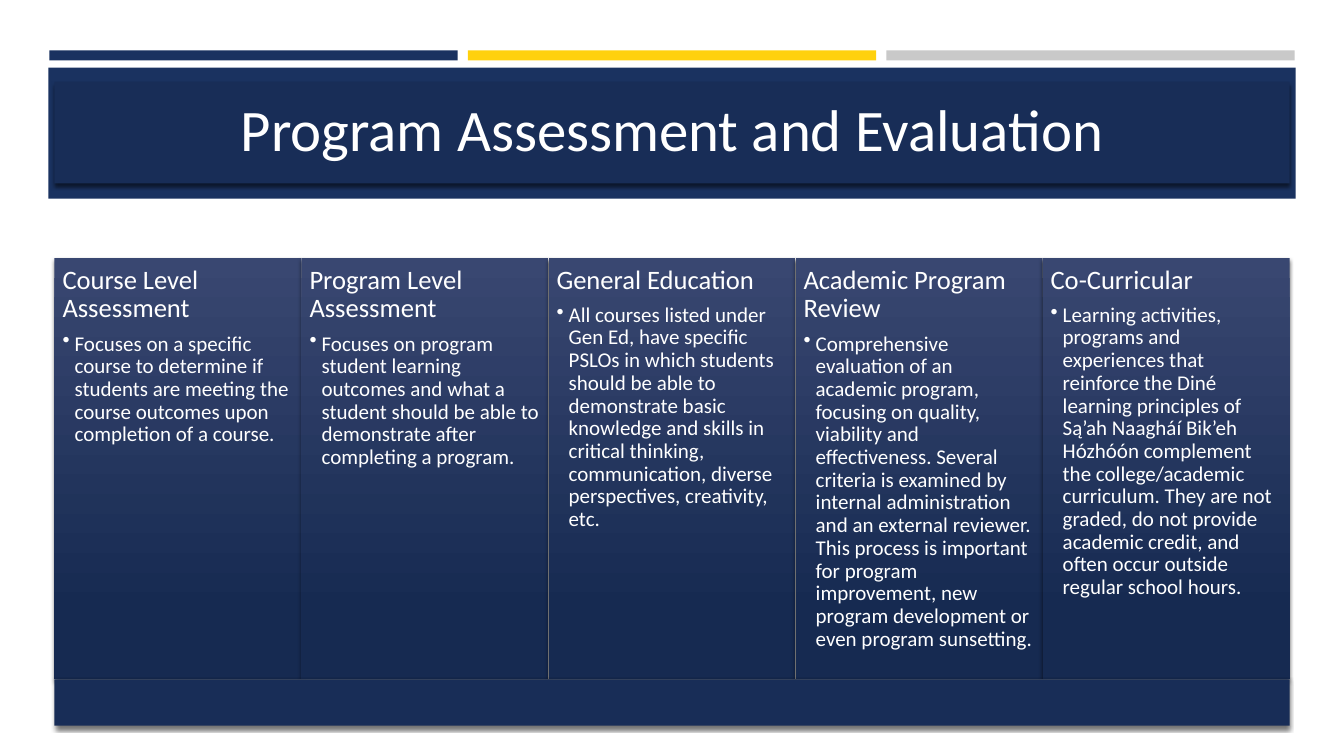
from lxml.etree import SubElement
from pptx import Presentation
from pptx.dml.color import RGBColor
from pptx.enum.shapes import MSO_SHAPE
from pptx.enum.text import MSO_ANCHOR, MSO_AUTO_SIZE, PP_ALIGN
from pptx.oxml import parse_xml
from pptx.oxml.ns import nsdecls, qn
from pptx.util import Inches, Pt

COLORS = {
    "navy": "1A3260",
    "yellow": "FFD10D",
    "gray": "C9C9C9",
    "panel": "182D57",
    "column_top": "394771",
    "column_bottom": "162A51",
    "text": "FFFFFF",
}
FONT = "Calibri"
LEFT, WIDTH = 0.54, 12.25
COLUMN_TOP, COLUMN_HEIGHT = 2.56, 4.18

COLUMNS = [
    ("Course Level Assessment",
     "Focuses on a specific course to determine if students are meeting the "
     "course outcomes upon completion of a course."),
    ("Program Level Assessment",
     "Focuses on program student learning outcomes and what a student should "
     "be able to demonstrate after completing a program."),
    ("General Education",
     "All courses listed under Gen Ed, have specific PSLOs in which students "
     "should be able to demonstrate basic knowledge and skills in critical "
     "thinking, communication, diverse perspectives, creativity, etc."),
    ("Academic Program Review",
     "Comprehensive evaluation of an academic program, focusing on quality, "
     "viability and effectiveness. Several criteria is examined by internal "
     "administration and an external reviewer. This process is important for "
     "program improvement, new program development or even program sunsetting."),
    ("Co-Curricular",
     "Learning activities, programs and experiences that reinforce the Diné "
     "learning principles of Są’ah Naagháí Bik’eh Hózhóón complement the "
     "college/academic curriculum. They are not graded, do not provide "
     "academic credit, and often occur outside regular school hours."),
]


def add_block(left, top, width, height, color):
    """Add a borderless, flat rectangle."""
    shape = slide.shapes.add_shape(
        MSO_SHAPE.RECTANGLE, Inches(left), Inches(top), Inches(width), Inches(height))
    shape.shadow.inherit = False
    shape.fill.solid()
    shape.fill.fore_color.rgb = RGBColor.from_string(COLORS[color])
    shape.line.fill.background()
    return shape


def add_soft_shadow(shape):
    shape.shadow.inherit = False
    effects = shape._element.spPr.find(qn("a:effectLst"))
    effects.append(parse_xml(
        f'<a:outerShdw {nsdecls("a")} blurRad="{Pt(3)}" dist="{Pt(2)}" dir="5400000" '
        'rotWithShape="0"><a:srgbClr val="000000"><a:alpha val="55000"/></a:srgbClr>'
        '</a:outerShdw>'))


presentation = Presentation()
presentation.slide_width = Inches(13.33)
presentation.slide_height = Inches(7.5)
slide = presentation.slides.add_slide(presentation.slide_layouts[5])

# Header stripes and band
for index, color in enumerate(["navy", "yellow", "gray"]):
    add_block(0.49 + index * 4.15, 0.5, 4.05, 0.1, color)
add_block(0.48, 0.67, 12.37, 1.3, "navy")

# Title, raised above the band
title = slide.shapes.title
slide.shapes._spTree.append(title._element)
title.left, title.top = Inches(LEFT), Inches(0.81)
title.width, title.height = Inches(WIDTH), Inches(1.01)
title.fill.solid()
title.fill.fore_color.rgb = RGBColor.from_string(COLORS["panel"])
add_soft_shadow(title)
title.text_frame.text = "Program Assessment and Evaluation"
title.text_frame.auto_size = MSO_AUTO_SIZE.NONE
title.text_frame.vertical_anchor = MSO_ANCHOR.MIDDLE
paragraph = title.text_frame.paragraphs[0]
paragraph.alignment = PP_ALIGN.CENTER
paragraph.line_spacing = 0.9
paragraph.font.size = Pt(42)
paragraph.font.name = FONT
paragraph.font.color.rgb = RGBColor.from_string(COLORS["text"])

# Five columns
column_width = WIDTH / len(COLUMNS)
for index, (heading, description) in enumerate(COLUMNS):
    column = add_block(LEFT + index * column_width, COLUMN_TOP,
                       column_width, COLUMN_HEIGHT, "panel")
    column.fill.gradient()
    column.fill.gradient_angle = 270
    stops = zip(column.fill.gradient_stops, [0, 0.84], ["column_top", "column_bottom"])
    for stop, position, color in stops:
        stop.position = position
        stop.color.rgb = RGBColor.from_string(COLORS[color])
    add_soft_shadow(column)

    frame = column.text_frame
    frame.word_wrap = True
    frame.vertical_anchor = MSO_ANCHOR.TOP
    frame.margin_left = frame.margin_right = Inches(0.08)
    frame.margin_top = frame.margin_bottom = Inches(0.08)
    frame.text = f"{heading}\n{description}"
    for paragraph, size, gap in zip(frame.paragraphs, [19, 15], [0.35, 0.15]):
        paragraph.alignment = PP_ALIGN.LEFT
        paragraph.line_spacing = 0.9
        paragraph.space_after = Pt(size * gap)
    bullet = frame.paragraphs[1]
    bullet.level = 1
    properties = bullet._p.get_or_add_pPr()
    properties.set("marL", str(Inches(0.12)))
    properties.set("indent", str(Inches(-0.12)))
    SubElement(properties, qn("a:buChar")).set("char", "•")
    for paragraph, size in zip(frame.paragraphs, [19, 15]):
        paragraph.font.size = Pt(size)
        paragraph.font.name = FONT
        paragraph.font.color.rgb = RGBColor.from_string(COLORS["text"])

# Base strip
base = add_block(LEFT, COLUMN_TOP + COLUMN_HEIGHT, WIDTH, 0.46, "panel")
add_soft_shadow(base)

presentation.save("out.pptx")
